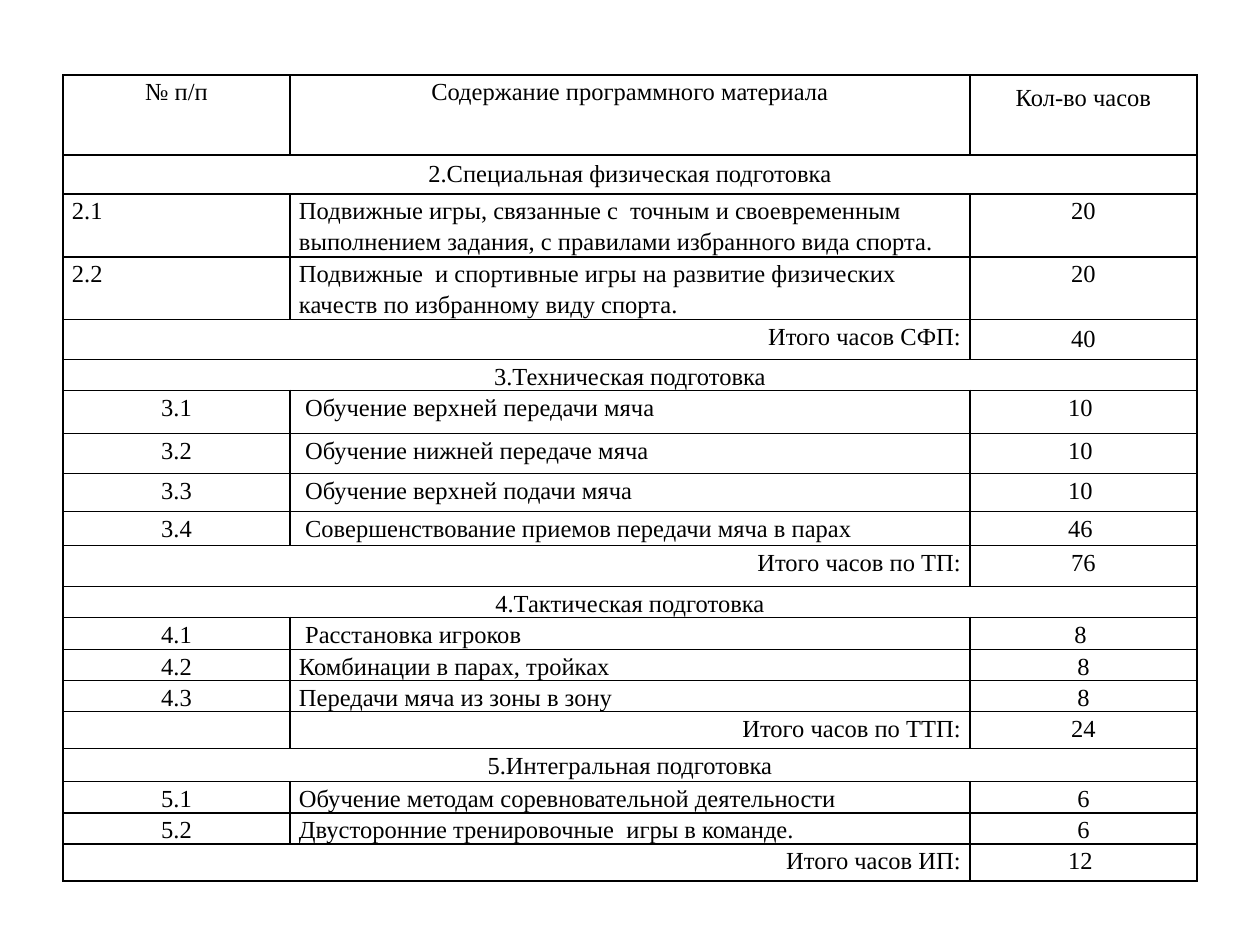
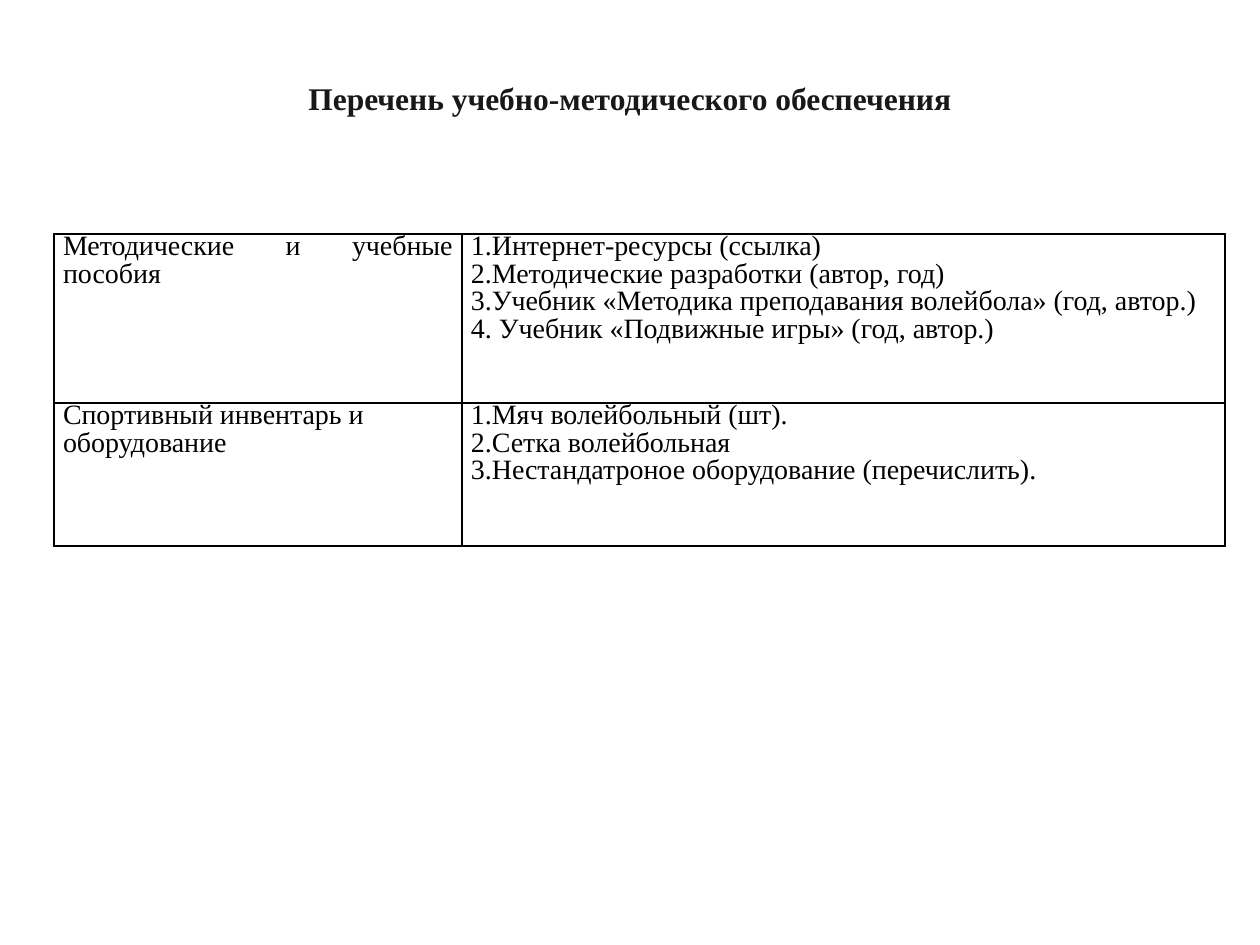
from lxml.etree import SubElement
from pptx import Presentation
from pptx.dml.color import RGBColor
from pptx.enum.text import MSO_ANCHOR as Anchor, PP_ALIGN as Align
from pptx.oxml import parse_xml
from pptx.oxml.ns import nsdecls, qn
from pptx.util import Emu, Pt

FONT = "Times New Roman"
BLACK, DARK = "000000", "181818"
LEFT, MID, RIGHT, JUST = Align.LEFT, Align.CENTER, Align.RIGHT, Align.JUSTIFY
EXACT = Pt(15.8)
TIGHT, LOOSE = (9, 0), (13, 6)  # side and top/bottom cell margins

# Row height, number, content, hours; section rows have only a heading,
# total rows have None in place of the number
HOURS = [
    (80, "№ п/п", "Содержание программного материала", "Кол-во часов"),
    (39, "2.Специальная физическая подготовка"),
    (63, "2.1", "Подвижные игры, связанные с  точным и своевременным "
     "выполнением задания, с правилами избранного вида спорта.", "20"),
    (62, "2.2", "Подвижные  и спортивные игры на развитие физических "
     "качеств по избранному виду спорта.", "20"),
    (40, None, "Итого часов СФП:", "40"),
    (31, "3.Техническая подготовка"),
    (43, "3.1", " Обучение верхней передачи мяча", "10 "),
    (40, "3.2", " Обучение нижней передаче мяча", "10 "),
    (38, "3.3", " Обучение верхней подачи мяча", "10 "),
    (34, "3.4", " Совершенствование приемов передачи мяча в парах", "46 "),
    (41, None, "Итого часов по ТП:", "76"),
    (31, " 4.Тактическая подготовка "),
    (32, "4.1", " Расстановка игроков", "8 "),
    (31, "4.2", "Комбинации в парах, тройках", "8"),
    (31, "4.3", "Передачи мяча из зоны в зону", "8"),
    (37, "", "Итого часов по ТТП:", "24"),
    (33, "5.Интегральная подготовка"),
    (31, "5.1", "Обучение методам соревновательной деятельности", "6"),
    (31, "5.2", "Двусторонние тренировочные  игры в команде.", "6"),
    (37, None, "Итого часов ИП:", "12 "),
]

# Row height, heading, its alignment, items
SUPPLY = [
    (169, "Методические и учебные пособия", JUST, [
        "1.Интернет-ресурсы (ссылка)",
        "2.Методические разработки (автор, год)",
        "3.Учебник «Методика преподавания волейбола» (год, автор.)",
        "4. Учебник «Подвижные игры» (год, автор.)"]),
    (143, "Спортивный инвентарь и оборудование", LEFT, [
        "1.Мяч волейбольный (шт).",
        "2.Сетка волейбольная",
        "3.Нестандатроное оборудование (перечислить)."]),
]


def px(num):
    return Emu(round(num * 914400 / 126))


def paint(hue):
    return RGBColor.from_string(hue)


def put(obj, vals):
    for key, val in vals.items():
        setattr(obj, key, val)


def write(frame, lines, size, align, gap, hue=BLACK, bold=False):
    """Fill a text frame with one paragraph per line."""
    for i, line in enumerate(lines):
        para = frame.add_paragraph() if i else frame.paragraphs[0]
        put(para, {"alignment": align, "line_spacing": gap})
        if line:
            run = para.add_run()
            run.text = line
            put(run.font, {"name": FONT, "size": Pt(size), "bold": bold})
            run.font.color.rgb = paint(hue)
        else:
            SubElement(para._p, qn("a:endParaRPr"), sz=str(size * 100))


def pad(cell, side, edge):
    put(cell, {"margin_left": px(side), "margin_right": px(side),
               "margin_top": px(edge), "margin_bottom": px(edge)})


def frame_cell(cell):
    """Clear the fill and draw a thin line on all four sides."""
    cell.fill.background()
    props = cell._tc.get_or_add_tcPr()
    for i, side in enumerate("LRTB"):
        props.insert(i, parse_xml(
            f'<a:ln{side} {nsdecls("a")} w="12700"><a:solidFill>'
            f'<a:srgbClr val="{BLACK}"/></a:solidFill></a:ln{side}>'))


def grid(slide, left, top, cols, rows):
    """Add a plain ruled table with the given column and row sizes."""
    table = slide.shapes.add_table(
        len(rows), len(cols), px(left), px(top),
        px(sum(cols)), px(sum(rows))).table
    put(table, {"first_row": False, "horz_banding": False})
    for col, wide in zip(table.columns, cols):
        col.width = px(wide)
    for row, high in zip(table.rows, rows):
        row.height = px(high)
    for cell in table.iter_cells():
        frame_cell(cell)
        pad(cell, *TIGHT)
    return table


def plan(slide, left, top):
    """Table of training hours."""
    table = grid(slide, left, top, (227, 680, 227), [r[0] for r in HOURS])

    def fill(row, col, text, align=MID, gap=1.15):
        write(table.cell(row, col).text_frame, [text], 14, align, gap)

    for i, (_, num, *rest) in enumerate(HOURS):
        first = table.cell(i, 0)
        # Section heading
        if not rest:
            first.merge(table.cell(i, 2))
            fill(i, 0, num, gap=1.0 if i == 1 else 1.15)
            continue
        # Number, content and hours
        text, hours = rest
        total = text.startswith("Итого")
        side = MID if i == 0 else RIGHT if total else LEFT
        if num is None:
            first.merge(table.cell(i, 1))
            fill(i, 0, text, side)
        else:
            fill(i, 0, num, LEFT if num.startswith("2.") else MID)
            fill(i, 1, text, side)
        fill(i, 2, hours, gap=1.0 if hours == "40" else 1.15)

    # Roomier cells
    for row, col in ((0, 2), (1, 0), (4, 2)):
        pad(table.cell(row, col), *LOOSE)


def title(slide, text, left, top, wide, high):
    """Slide title, lifted a little by its bottom margin."""
    head = slide.shapes.title
    put(head, {"left": px(left), "top": px(top),
               "width": px(wide), "height": px(high)})
    put(head.text_frame, {"vertical_anchor": Anchor.MIDDLE, "word_wrap": True,
                          "margin_bottom": px(34)})
    write(head.text_frame, [text], 18, MID, EXACT, DARK, True)


def supply(slide, left, top):
    """Table of teaching aids and equipment."""
    table = grid(slide, left, top, (408, 763), [r[0] for r in SUPPLY])
    for i, (_, name, align, items) in enumerate(SUPPLY):
        write(table.cell(i, 0).text_frame, [name], 16, align, EXACT)
        write(table.cell(i, 1).text_frame, items, 16, JUST, EXACT)


def main():
    deck = Presentation()
    put(deck, {"slide_width": px(1260), "slide_height": px(945)})
    only, blank = deck.slide_layouts[5], deck.slide_layouts[6]

    plan(deck.slides.add_slide(blank), 63, 75)

    slide = deck.slides.add_slide(only)
    title(slide, "Перечень учебно-методического обеспечения",
          63, 38, 1134, 158)
    supply(slide, 54, 234)

    deck.save("out.pptx")


if __name__ == "__main__":
    main()
